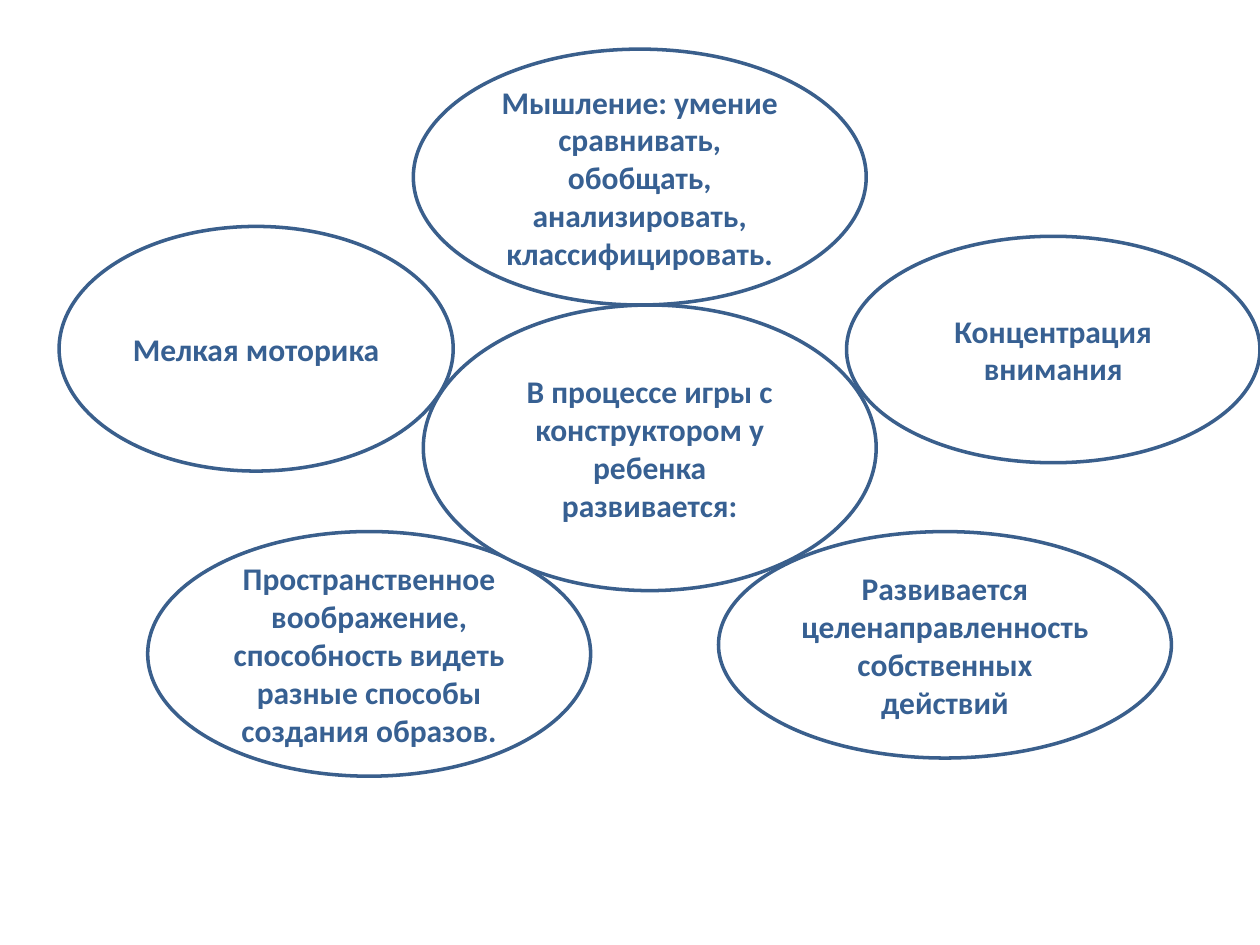
from pptx import Presentation
from pptx.dml.color import RGBColor
from pptx.enum.shapes import MSO_SHAPE
from pptx.enum.text import MSO_ANCHOR, PP_ALIGN
from pptx.util import Pt

WHITE = RGBColor(0xFF, 0xFF, 0xFF)
OUTLINE_BLUE = RGBColor(0x3A, 0x5F, 0x8C)
TEXT_BLUE = RGBColor(0x37, 0x60, 0x92)

# Skills around the centre: text, left, top, width, height in points
SKILLS = [
    ("Мелкая моторика", 33.75, 129.4, 225.2, 139.8),
    ("Мышление: умение сравнивать, обобщать, анализировать, классифицировать.",
     236.2, 28.1, 258.8, 146.2),
    ("Концентрация внимания", 483.75, 135, 236.25, 129.4),
    ("Пространственное воображение, способность видеть разные способы "
     "создания образов.", 84.4, 303.75, 253.1, 139.8),
    ("Развивается целенаправленность собственных действий",
     410.6, 303.75, 258.8, 129.4),
]
# The centre lies on top of the skills
CENTRE = ("В процессе игры с конструктором у ребенка развивается:",
          241.9, 174.3, 258.8, 163.2)


class SlideBuilder:
    """Holds the shared style and the current slide."""

    font_format = {"name": "Calibri", "size": Pt(18), "bold": True}
    frame_format = {"word_wrap": True, "vertical_anchor": MSO_ANCHOR.MIDDLE}

    def __init__(self, slide):
        self.slide = slide

    def apply(self, target, values):
        for name, value in values.items():
            setattr(target, name, value)

    def ellipse(self, text, left, top, width, height):
        oval = self.slide.shapes.add_shape(
            MSO_SHAPE.OVAL, Pt(left), Pt(top), Pt(width), Pt(height))
        oval.shadow.inherit = False
        oval.fill.solid()
        oval.fill.fore_color.rgb = WHITE
        oval.line.color.rgb = OUTLINE_BLUE
        oval.line.width = Pt(2)

        # Label
        self.apply(oval.text_frame, self.frame_format)
        label = oval.text_frame.paragraphs[0]
        label.alignment = PP_ALIGN.CENTER
        run = label.add_run()
        run.text = text
        self.apply(run.font, self.font_format)
        run.font.color.rgb = TEXT_BLUE


def main():
    presentation = Presentation()
    presentation.slide_width = Pt(720)
    presentation.slide_height = Pt(540)
    builder = SlideBuilder(
        presentation.slides.add_slide(presentation.slide_layouts[6]))

    for bubble in [*SKILLS, CENTRE]:
        builder.ellipse(*bubble)

    presentation.save("out.pptx")


if __name__ == "__main__":
    main()
